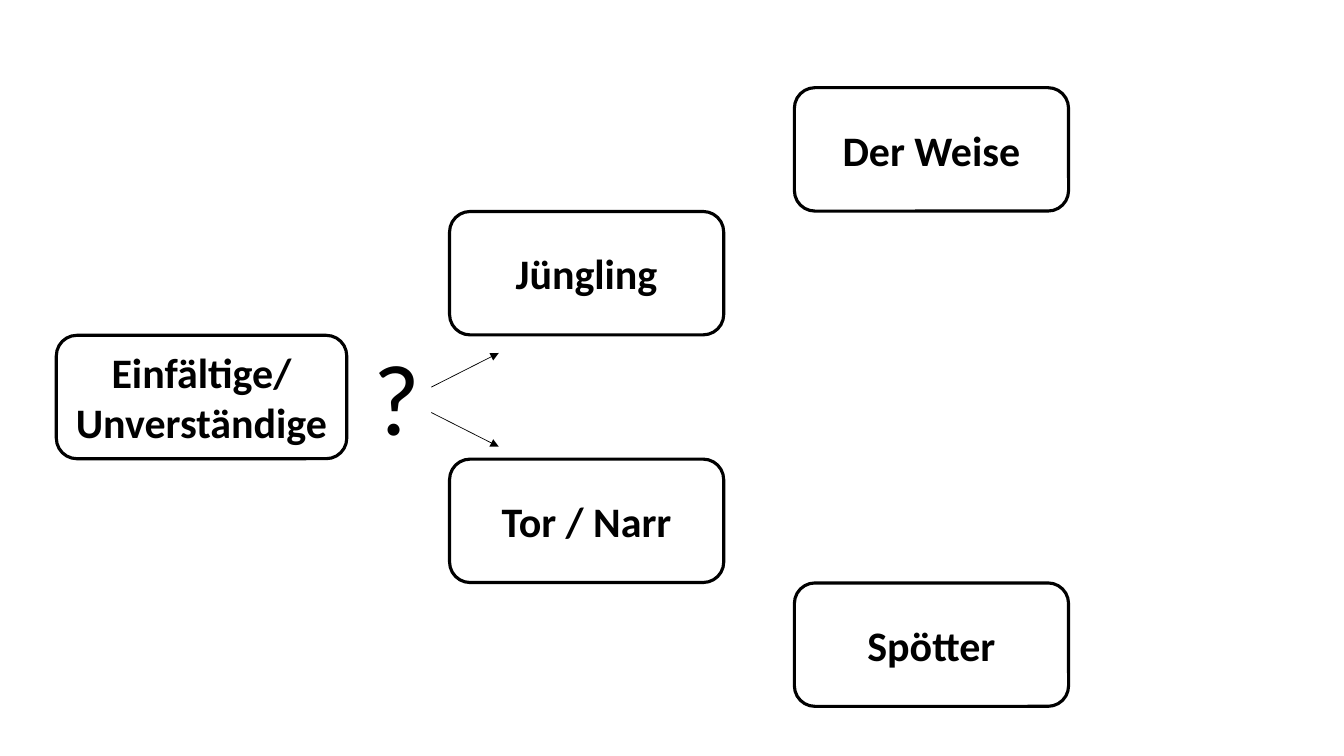
from lxml.etree import SubElement
from pptx import Presentation
from pptx.dml.color import RGBColor
from pptx.enum.shapes import MSO_CONNECTOR as Line, MSO_SHAPE as Shape
from pptx.enum.text import MSO_ANCHOR as Anchor, MSO_AUTO_SIZE as Fit, PP_ALIGN as Align
from pptx.oxml.ns import qn
from pptx.util import Cm, Pt

BLACK, WHITE = "000000", "FFFFFF"


def color(code):
    return RGBColor.from_string(code)


def style(par, size, bold=False):
    font = par.font
    font.name, font.size, font.bold = "Calibri", Pt(size), bold
    font.color.rgb = color(BLACK)


def add_card(slide, text, left, top, width, height):
    card = slide.shapes.add_shape(
        Shape.ROUNDED_RECTANGLE, Cm(left), Cm(top), Cm(width), Cm(height))
    card.shadow.inherit = False
    card.fill.solid()
    card.fill.fore_color.rgb = color(WHITE)
    card.line.color.rgb = color(BLACK)
    card.line.width = Pt(2.25)
    frame = card.text_frame
    frame.word_wrap = True
    frame.vertical_anchor = Anchor.MIDDLE
    par = frame.paragraphs[0]
    par.text = text
    par.alignment = Align.CENTER
    style(par, 30, True)


def add_arrow(slide, x1, y1, x2, y2):
    arrow = slide.shapes.add_connector(
        Line.STRAIGHT, Cm(x1), Cm(y1), Cm(x2), Cm(y2))
    arrow.line.color.rgb = color(BLACK)
    arrow.line.width = Pt(0.5)
    SubElement(arrow.line._get_or_add_ln(), qn("a:tailEnd"), type="triangle")
    SubElement(arrow._element.spPr, qn("a:effectLst"))


def add_fork(slide, left, top, width, height):
    # Question mark
    box = slide.shapes.add_textbox(Cm(left), Cm(top), Cm(width), Cm(height))
    frame = box.text_frame
    frame.word_wrap = False
    frame.auto_size = Fit.SHAPE_TO_FIT_TEXT
    par = frame.paragraphs[0]
    par.text = "?"
    style(par, 72)

    # Arrows up and down, mirrored about the middle
    right, mid = left + width, top + height / 2 + 0.1
    for way in (1, -1):
        add_arrow(slide, right, mid + way * 0.32, right + 1.7, mid + way * 1.18)


def add_paths(slide, top, height, pitch):
    # Text, left, width and row of each card
    cards = [
        ("Einfältige/ Unverständige", 1.42, 7.32, 2),
        ("Jüngling", 11.33, 6.91, 1),
        ("Tor / Narr", 11.33, 6.91, 3),
        ("Der Weise", 20.02, 6.91, 0),
        ("Spötter", 20.02, 6.91, 4),
    ]
    for text, left, width, row in cards:
        add_card(slide, text, left, top + row * pitch, width, height)
    add_fork(slide, 9.17, 8.31, 1.7, 3.33)


def main():
    deck = Presentation()
    deck.slide_width, deck.slide_height = Cm(33.87), Cm(19.05)
    slide = deck.slides.add_slide(deck.slide_layouts[6])
    add_paths(slide, top=2.21, height=3.11, pitch=3.12)
    deck.save("out.pptx")


if __name__ == "__main__":
    main()
